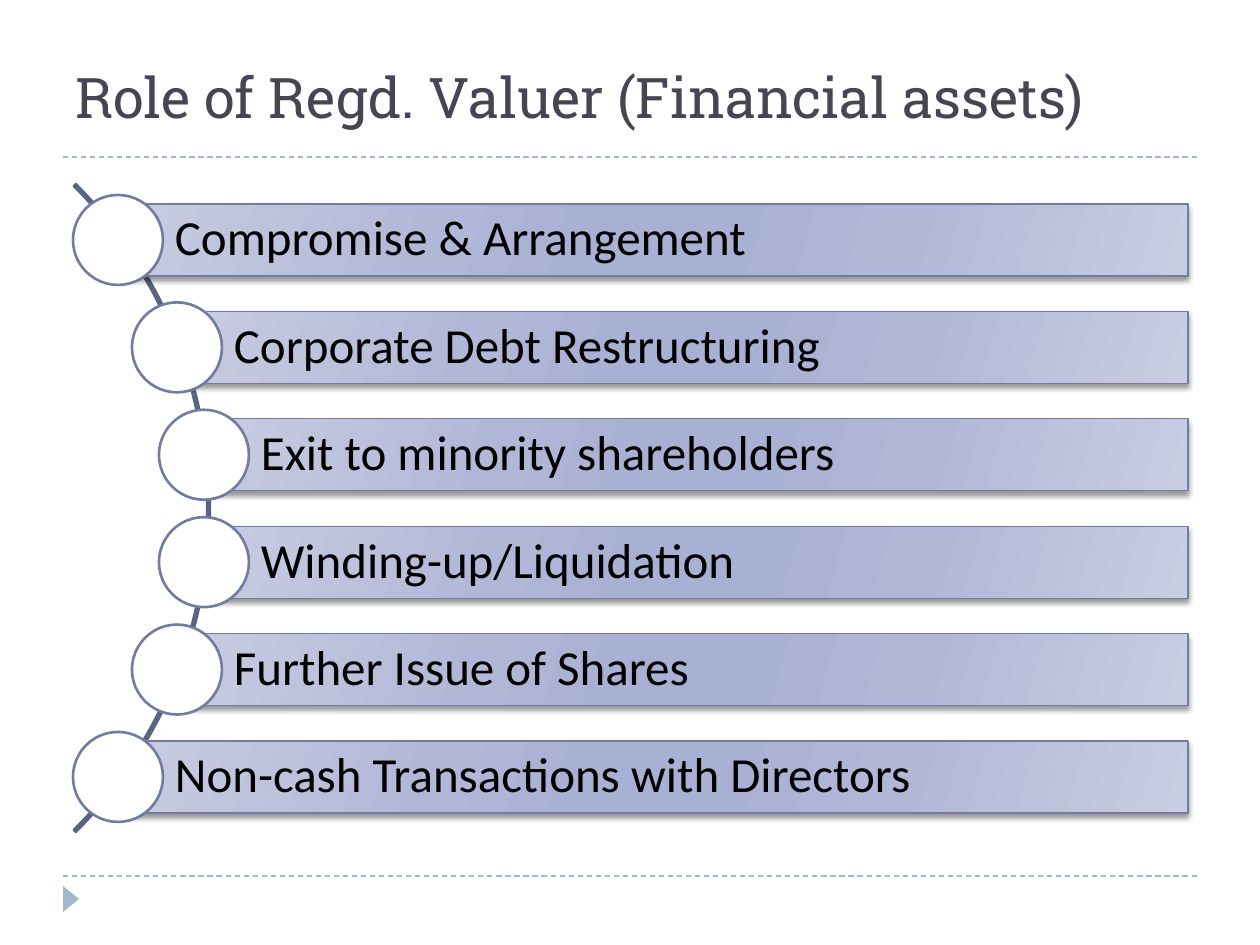
from lxml import etree
from pptx import Presentation
from pptx.dml.color import RGBColor
from pptx.enum.dml import MSO_LINE
from pptx.enum.shapes import MSO_CONNECTOR, MSO_SHAPE as SHAPE
from pptx.enum.text import MSO_ANCHOR as ANCHOR, PP_ALIGN as ALIGN
from pptx.oxml import parse_xml
from pptx.oxml.ns import nsdecls, qn
from pptx.util import Emu, Pt

PX = 914400 / 126
ROLES = [
    ("Compromise & Arrangement", 118),
    ("Corporate Debt Restructuring", 177),
    ("Exit to minority shareholders", 204),
    ("Winding-up/Liquidation", 204),
    ("Further Issue of Shares", 177),
    ("Non-cash Transactions with Directors", 118),
]
STOPS = [(0, "C9CDE2"), (30, "B1B7D7"), (45, "A8B0D3"),
         (55, "A8B0D3"), (73, "B1B7D7"), (100, "C9CDE2")]
GRADIENT = (
    f'<a:gradFill {nsdecls("a")} rotWithShape="1"><a:gsLst>'
    + "".join(f'<a:gs pos="{pos * 1000}"><a:srgbClr val="{c}"/></a:gs>' for pos, c in STOPS)
    + '</a:gsLst><a:lin ang="960000" scaled="0"/></a:gradFill>'
)
SHADOW = (
    f'<a:outerShdw {nsdecls("a")} blurRad="38100" dist="25400" dir="5400000" rotWithShape="0">'
    '<a:srgbClr val="000000"><a:alpha val="40000"/></a:srgbClr></a:outerShdw>'
)


def rgb(value):
    return RGBColor.from_string(value)


def add_shape(kind, box, line=None, width=1.5, fill=None):
    """Add a preset shape without shadow; box is left, top, width, height in px."""
    sp = s.shapes.add_shape(kind, *(Emu(round(v * PX)) for v in box))
    sp.shadow.inherit = False
    if fill:
        sp.fill.solid()
        sp.fill.fore_color.rgb = rgb(fill)
    else:
        sp.fill.background()
    if line:
        sp.line.color.rgb = rgb(line)
        sp.line.width = Pt(width)
    else:
        sp.line.fill.background()
    return sp


prs = Presentation()
prs.slide_width, prs.slide_height = Emu(round(1260 * PX)), Emu(round(945 * PX))
s = prs.slides.add_slide(prs.slide_layouts[5])

# Rules above and below the content, and the corner marker
for y in (876, 157):
    rule = s.shapes.add_connector(
        MSO_CONNECTOR.STRAIGHT, *(Emu(round(v * PX)) for v in (63, y, 1197, y)))
    rule.line.color.rgb = rgb("9FB8CD")
    rule.line.width = Pt(0.75)
    rule.line.dash_style = MSO_LINE.DASH
    etree.SubElement(rule._element.spPr, qn("a:effectLst"))
marker = add_shape(SHAPE.ISOSCELES_TRIANGLE, (58, 891, 26, 16), fill="9FB8CD")
marker.rotation = 90

# Title
title = s.shapes.title
title.left, title.top, title.width, title.height = (
    Emu(round(v * PX)) for v in (63, -21, 1134, 157))
tf = title.text_frame
tf.text = "Role of Regd. Valuer (Financial assets)"
tf.vertical_anchor = ANCHOR.BOTTOM
p = tf.paragraphs[0]
p.alignment = ALIGN.LEFT
p.font.name, p.font.size = "Roboto Slab", Pt(32)
p.font.color.rgb = rgb("464653")

# Curve behind the circles
arc = add_shape(SHAPE.BLOCK_ARC, (-706, 50, 916, 916), line="5B6383")
for i, value in enumerate((189, 27, 0.003)):
    arc.adjustments[i] = value

# One bar and circle per role; each bar starts at its circle's centre
for i, (role, center_x) in enumerate(ROLES):
    center_y = 240 + 537 * i / 5
    bar = add_shape(SHAPE.RECTANGLE, (center_x, center_y - 36, 1188 - center_x, 72),
                    line="727CA3", width=0.75)
    props = bar._element.spPr
    props.replace(props.find(qn("a:noFill")), parse_xml(GRADIENT))
    props.find(qn("a:effectLst")).append(parse_xml(SHADOW))
    tf = bar.text_frame
    tf.text = role
    tf.word_wrap = True
    tf.vertical_anchor = ANCHOR.MIDDLE
    tf.margin_left = Emu(round(57 * PX))
    tf.margin_top = tf.margin_right = tf.margin_bottom = Emu(round(10 * PX))
    p = tf.paragraphs[0]
    p.alignment = ALIGN.LEFT
    p.line_spacing = 0.9
    p.font.name, p.font.size = "Calibri", Pt(28)
    p.font.color.rgb = rgb("000000")
    add_shape(SHAPE.OVAL, (center_x - 45, center_y - 45, 90, 90), line="727CA3", fill="FFFFFF")

prs.save("out.pptx")
